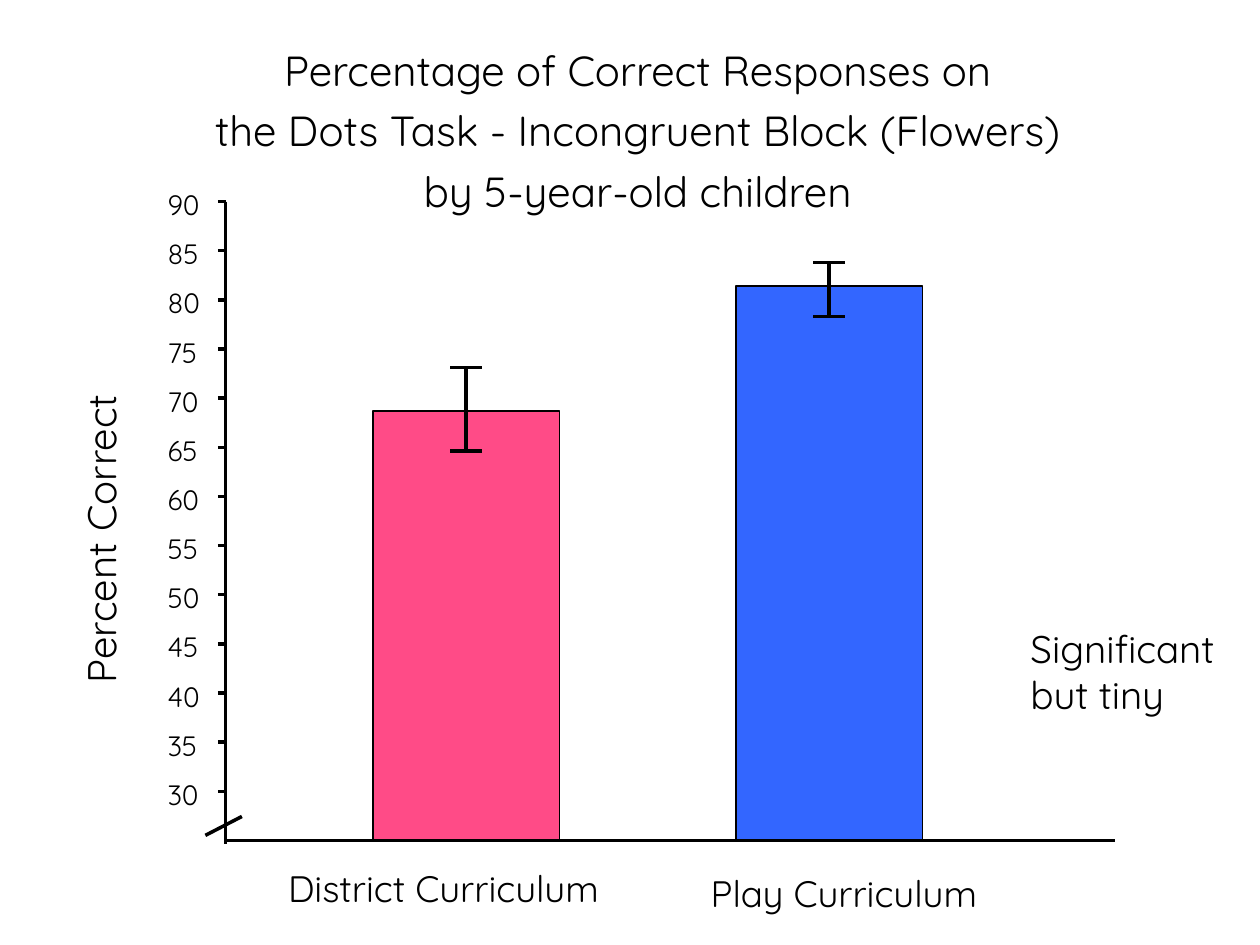
from lxml.etree import SubElement
from pptx import Presentation
from pptx.dml.color import RGBColor
from pptx.enum.shapes import MSO_CONNECTOR, MSO_SHAPE
from pptx.enum.text import MSO_ANCHOR, MSO_AUTO_SIZE, PP_ALIGN
from pptx.oxml.ns import qn
from pptx.util import Inches, Pt

TITLE = [
    "Percentage of Correct Responses on",
    "the Dots Task - Incongruent Block (Flowers)",
    "by 5-year-old children",
]
BARS = [
    dict(name="District Curriculum", value=68.7, low=64.6, high=73.1,
         fill="FF4B87", left=2.96, box=(2.17, 6.87, 2.7, 0.35),
         align=PP_ALIGN.CENTER),
    dict(name="Play Curriculum", value=81.4, low=78.3, high=83.8,
         fill="3366FF", left=5.84, box=(5.64, 6.91, 2.39, 0.35),
         align=PP_ALIGN.LEFT),
]
TOP, STEP, MAX, MIN = 1.6, 0.39, 90, 30
AXIS, BASE, END = 1.79, 6.67, 8.85
WIDE, CAP, TICK = 1.48, 0.25, 0.06
FONT, INK = "Quicksand", "000000"


def color(code):
    return RGBColor.from_string(code)


def level(value):
    return TOP + (MAX - value) / 5 * STEP


def style(frame, size, align=PP_ALIGN.LEFT, inset=0, wrap=False):
    frame.word_wrap = wrap
    frame.auto_size = MSO_AUTO_SIZE.NONE
    frame.vertical_anchor = MSO_ANCHOR.TOP
    frame.margin_left = frame.margin_right = Inches(inset)
    frame.margin_top = frame.margin_bottom = Inches(inset / 2)
    for para in frame.paragraphs:
        para.alignment = align
        para.font.size = Pt(size)
        para.font.name = FONT
        para.font.color.rgb = color(INK)


def label(slide, text, box, size, **look):
    shape = slide.shapes.add_textbox(*map(Inches, box))
    shape.text_frame.text = text
    style(shape.text_frame, size, **look)
    return shape


def rule(slide, *ends):
    line = slide.shapes.add_connector(MSO_CONNECTOR.STRAIGHT, *map(Inches, ends))
    line.line.color.rgb = color(INK)
    line.line.width = Pt(2)
    SubElement(line._element.spPr, qn("a:effectLst"))
    return line


def heading(slide):
    title = slide.shapes.title
    title.left, title.top, title.width, title.height = map(
        Inches, (0.6, 0.27, 8.92, 1.84))
    title.text_frame.text = "\n".join(TITLE)
    style(title.text_frame, 24, PP_ALIGN.CENTER, wrap=True)
    for para in title.text_frame.paragraphs:
        para.line_spacing = 1.2


def column(slide, name, value, low, high, fill, left, box, align):
    top, mid = level(value), left + WIDE / 2
    bar = slide.shapes.add_shape(
        MSO_SHAPE.RECTANGLE, *map(Inches, (left, top, WIDE, BASE - top)))
    bar.shadow.inherit = False
    bar.fill.solid()
    bar.fill.fore_color.rgb = color(fill)
    bar.line.color.rgb = color(INK)
    bar.line.width = Pt(0.88)
    for bound in (high, low):
        y = level(bound)
        rule(slide, mid, top, mid, y).begin_connect(bar, 0)
        rule(slide, mid - CAP / 2, y, mid + CAP / 2, y)
    label(slide, name, box, 21, align=align)


def axes(slide):
    for mark in range(MIN, MAX + 1, 5):
        y = level(mark)
        rule(slide, AXIS - TICK, y, AXIS, y)
        label(slide, str(mark), (1.33, y - 0.11, 0.26, 0.27), 16)
    rule(slide, AXIS, TOP, AXIS, BASE + 0.03)
    rule(slide, AXIS, BASE, END, BASE)
    rule(slide, 1.92, 6.48, 1.63, 6.63)
    label(slide, "Percent Correct", (-0.46, 3.98, 2.51, 0.38), 23).rotation = 270


def main():
    """Build the bar graph slide of the Dots Task results."""
    deck = Presentation()
    deck.slide_width, deck.slide_height = Inches(10), Inches(7.5)
    slide = deck.slides.add_slide(deck.slide_layouts[5])
    heading(slide)
    for bar in BARS:
        column(slide, **bar)
    axes(slide)
    label(slide, "Significant but tiny", (8.08, 4.91, 1.92, 0.83), 22,
          inset=0.1, wrap=True)
    deck.save("out.pptx")


if __name__ == "__main__":
    main()
